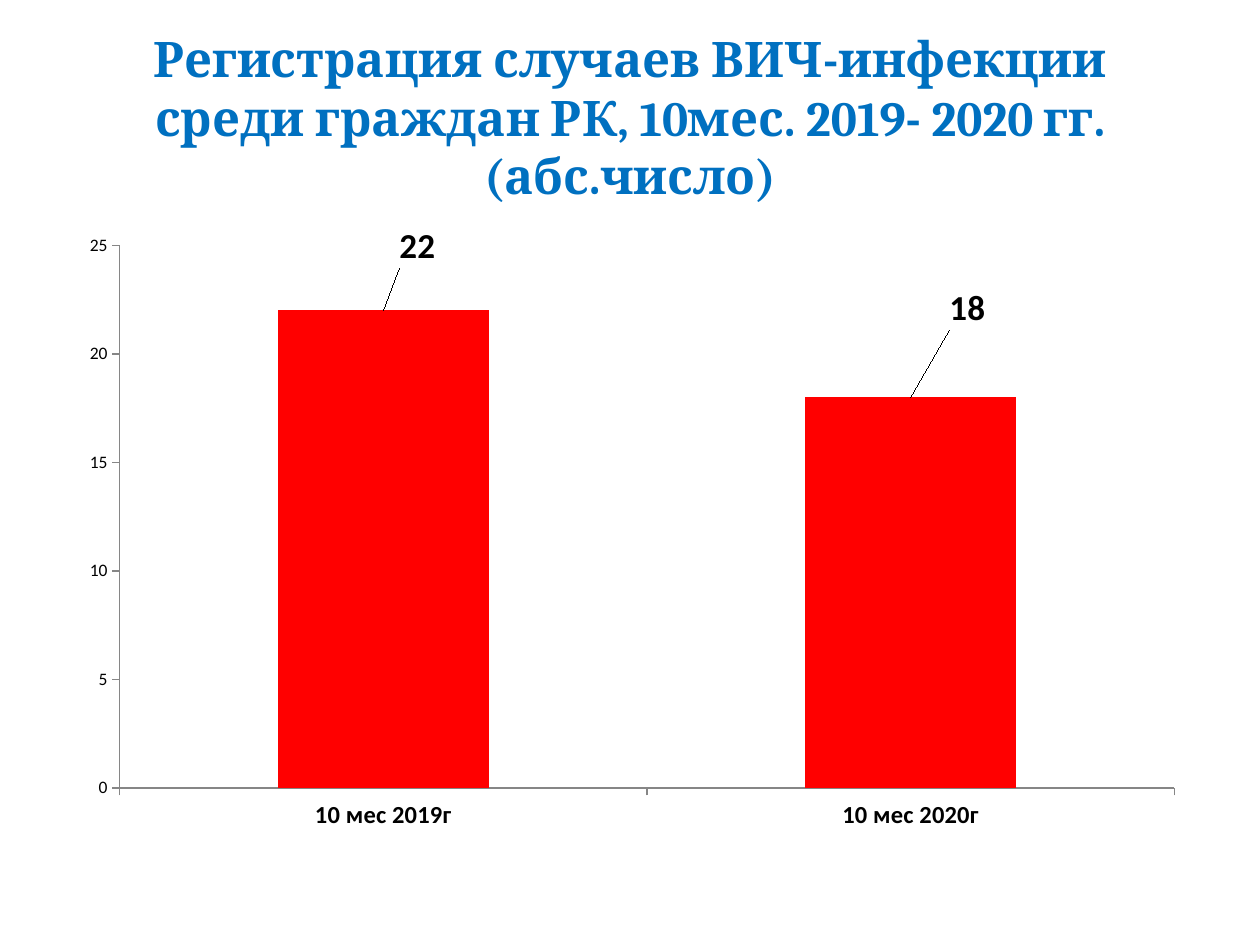
"""Build a slide comparing registered HIV cases for ten months of 2019 and 2020."""
from dataclasses import dataclass
from typing import Any

from lxml import etree
from pptx import Presentation
from pptx import util as u
from pptx.chart import data as chart_data
from pptx.dml.color import RGBColor
from pptx.enum import chart as chart_enum, text
from pptx.oxml.ns import qn

COLORS = {"title": "0070C0", "bar": "FF0000", "text": "000000", "axis": "868686"}
TITLE = "Регистрация случаев ВИЧ-инфекции среди граждан РК, 10мес. 2019- 2020 гг. (абс.число)"


@dataclass
class Period:
    name: str
    cases: int
    label_shift: dict[str, float]


PERIODS = [
    Period("10 мес 2019г", 22, {"x": 0.03, "y": -0.06}),
    Period("10 мес 2020г", 18, {"x": 0.05, "y": -0.1}),
]


def apply(target: Any, values: dict[str, Any]) -> None:
    for name, value in values.items():
        setattr(target, name, value)


def style_font(font: Any, color: str, size: float, name: str = "Calibri", bold: bool = False) -> None:
    apply(font, {"name": name, "size": u.Pt(size), "bold": bold})
    font.color.rgb = RGBColor.from_string(COLORS[color])


def place(shape: Any, left: float, top: float, width: float, height: float) -> None:
    lengths = {"left": left, "top": top, "width": width, "height": height}
    apply(shape, {name: u.Inches(value) for name, value in lengths.items()})


def set_layout(parent: Any, index: int, values: dict[str, Any]) -> None:
    for old in parent.findall(qn("c:layout")):
        parent.remove(old)
    layout = etree.Element(qn("c:layout"))
    manual = etree.SubElement(layout, qn("c:manualLayout"))
    for name, value in values.items():
        etree.SubElement(manual, qn(f"c:{name}")).set("val", str(value))
    parent.insert(index, layout)


def add_title(page: Any) -> None:
    box = page.shapes.title
    place(box, 0.5, 0.3, 9, 1.25)
    frame = box.text_frame
    apply(frame, {"word_wrap": True, "auto_size": text.MSO_AUTO_SIZE.NONE,
                  "vertical_anchor": text.MSO_ANCHOR.MIDDLE})
    para = frame.paragraphs[0]
    para.alignment = text.PP_ALIGN.CENTER
    span = para.add_run()
    span.text = TITLE
    style_font(span.font, "title", 28, "Cambria", True)


def add_case_chart(page: Any) -> None:
    data = chart_data.CategoryChartData()
    data.categories = [period.name for period in PERIODS]
    data.add_series("Series 1", [period.cases for period in PERIODS])
    area = [u.Inches(value) for value in (0.5, 1.75, 9, 4.95)]
    chart = page.shapes.add_chart(chart_enum.XL_CHART_TYPE.COLUMN_CLUSTERED, *area, data).chart
    apply(chart, {"has_legend": False, "has_title": False})
    style_font(chart.font, "text", 10)
    for axis in (chart.category_axis, chart.value_axis):
        apply(axis, {"has_major_gridlines": False,
                     "major_tick_mark": chart_enum.XL_TICK_MARK.OUTSIDE,
                     "minor_tick_mark": chart_enum.XL_TICK_MARK.NONE})
        axis.format.line.color.rgb = RGBColor.from_string(COLORS["axis"])
        axis.format.line.width = u.Pt(0.75)
    style_font(chart.category_axis.tick_labels.font, "text", 14, bold=True)
    apply(chart.value_axis, {"minimum_scale": 0, "maximum_scale": 25, "major_unit": 5})
    plot = chart.plots[0]
    apply(plot, {"gap_width": 150, "vary_by_categories": False})
    series = plot.series[0]
    series.format.fill.solid()
    series.format.fill.fore_color.rgb = RGBColor.from_string(COLORS["bar"])
    for index in range(len(PERIODS)):
        label = series.points[index].data_label
        style_font(label.font, "text", 20, bold=True)
        label.position = chart_enum.XL_LABEL_POSITION.OUTSIDE_END
    style_font(series.data_labels.font, "text", 20, bold=True)
    series.data_labels.show_value = True
    for period, label in zip(PERIODS, chart.element.iter(qn("c:dLbl"))):
        set_layout(label, 1, period.label_shift)
    set_layout(next(chart.element.iter(qn("c:plotArea"))), 0,
               {"layoutTarget": "inner", "xMode": "edge", "yMode": "edge",
                "x": 0.05, "y": 0.04, "w": 0.93, "h": 0.87})


def main() -> None:
    deck = Presentation()
    apply(deck, {"slide_width": u.Inches(10), "slide_height": u.Inches(7.5)})
    page = deck.slides.add_slide(deck.slide_layouts[5])
    add_title(page)
    add_case_chart(page)
    deck.save("out.pptx")


if __name__ == "__main__":
    main()
